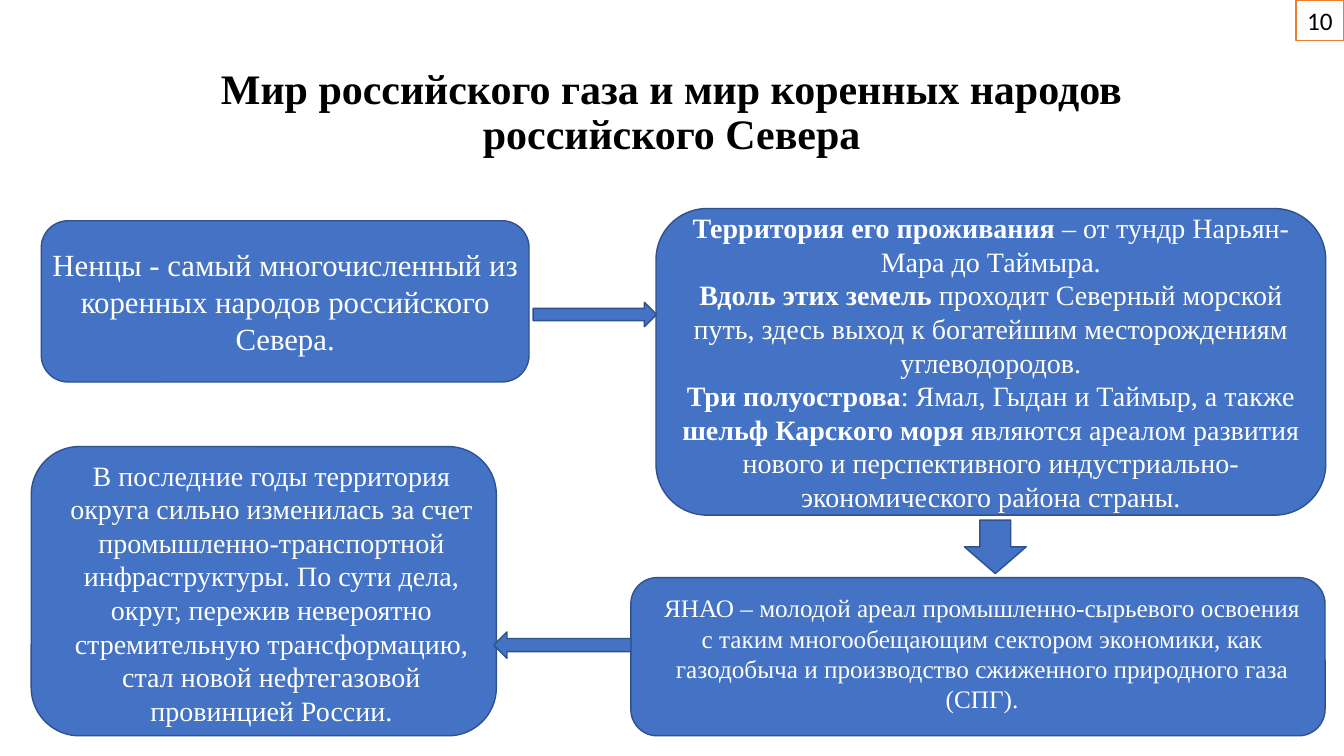
"""Build the slide on Russian gas and the peoples of the North."""
from dataclasses import dataclass

from pptx import Presentation
from pptx.dml.color import RGBColor
from pptx.enum.shapes import MSO_SHAPE
from pptx.enum.text import MSO_ANCHOR, PP_ALIGN
from pptx.shapes.autoshape import Shape
from pptx.slide import Slide
from pptx.text.text import TextFrame
from pptx.util import Pt

SERIF = "Times New Roman"
BLUE, NAVY, ORANGE = "4472C4", "2F528F", "ED7D31"
WHITE, BLACK = "FFFFFF", "000000"

Rect = tuple[float, float, float, float]
Run = tuple[str, bool]


@dataclass
class Box:
    """A filled shape with text; pad is left, top, right, bottom."""
    rect: Rect
    size: float
    text: list[list[Run]]
    pad: Rect
    kind: MSO_SHAPE = MSO_SHAPE.ROUNDED_RECTANGLE
    fill: str = BLUE
    line: str = NAVY
    ink: str = WHITE
    font: str = SERIF


@dataclass
class Arrow:
    """A block arrow."""
    kind: MSO_SHAPE
    rect: Rect


TITLE = "Мир российского газа и мир коренных народов российского Севера"

BOXES = [
    Box((29.5, 157.7, 348.5, 115.2), 22, [[
        ("Ненцы - самый многочисленный из коренных народов российского Севера.", False),
    ]], (1.5, 0, 1.5, 0)),
    Box((468.7, 149, 478.5, 219), 20, [
        [("Территория его проживания ", True),
         ("– от тундр Нарьян-Мара до Таймыра.", False)],
        [("Вдоль этих земель ", True),
         ("проходит Северный морской путь, здесь выход к богатейшим "
          "месторождениям углеводородов.", False)],
        [("Три полуострова", True),
         (": Ямал, Гыдан и Таймыр, а также ", False),
         ("шельф Карского моря ", True),
         ("являются ареалом развития нового и перспективного "
          "индустриально-экономического района страны.", False)],
    ], (0, 0, 0, 0)),
    Box((450.7, 412.6, 496, 113), 18, [[
        ("ЯНАО – молодой ареал промышленно-сырьевого освоения с таким "
         "многообещающим сектором экономики, как газодобыча и производство "
         "сжиженного природного газа (СПГ).", False),
    ]], (14.4, 0, 8.5, 5)),
    Box((22.3, 319, 332.3, 206.6), 20, [[
        ("В последние годы территория округа сильно изменилась за счет "
         "промышленно-транспортной инфраструктуры. По сути дела, округ, "
         "пережив невероятно стремительную трансформацию, стал новой "
         "нефтегазовой провинцией России.", False),
    ]], (13, 2, 2, 0)),
    Box((925.9, 0, 34.3, 28.9), 18, [[("10", False)]], (7.2, 3.6, 7.2, 3.6),
        MSO_SHAPE.RECTANGLE, WHITE, ORANGE, BLACK, "Calibri"),
]

ARROWS = [
    Arrow(MSO_SHAPE.RIGHT_ARROW, (380.9, 216, 88.2, 17.4)),
    Arrow(MSO_SHAPE.DOWN_ARROW, (689, 371.5, 44.2, 38.2)),
    Arrow(MSO_SHAPE.LEFT_ARROW, (352.8, 451.4, 98, 18.8)),
]


def tint(code: str) -> RGBColor:
    """Turn a hex string into a colour."""
    return RGBColor.from_string(code)


def write(frame: TextFrame, text: list[list[Run]], font: str, size: float, ink: str) -> None:
    """Fill a frame with centred paragraphs, run by run."""
    frame.word_wrap = True
    frame.vertical_anchor = MSO_ANCHOR.MIDDLE
    for spot, runs in enumerate(text):
        para = frame.add_paragraph() if spot else frame.paragraphs[0]
        para.alignment = PP_ALIGN.CENTER
        for words, bold in runs:
            run = para.add_run()
            run.text = words
            run.font.name = font
            run.font.size = Pt(size)
            run.font.bold = bold
            run.font.color.rgb = tint(ink)


def draw(slide: Slide, kind: MSO_SHAPE, rect: Rect, fill: str, line: str) -> Shape:
    """Add a flat shape with a thin outline."""
    shape = slide.shapes.add_shape(kind, *map(Pt, rect))
    shape.shadow.inherit = False
    shape.fill.solid()
    shape.fill.fore_color.rgb = tint(fill)
    shape.line.color.rgb = tint(line)
    shape.line.width = Pt(1)
    return shape


def add_box(slide: Slide, box: Box) -> None:
    """Draw a box and its text."""
    frame = draw(slide, box.kind, box.rect, box.fill, box.line).text_frame
    (frame.margin_left, frame.margin_top,
     frame.margin_right, frame.margin_bottom) = map(Pt, box.pad)
    write(frame, box.text, box.font, box.size, box.ink)


def add_title(slide: Slide) -> None:
    """Place and fill the title."""
    title = slide.shapes.title
    title.left, title.top, title.width, title.height = map(Pt, (66, 28.8, 828, 104.4))
    write(title.text_frame, [[(TITLE, True)]], SERIF, 30, BLACK)
    title.text_frame.paragraphs[0].line_spacing = 0.9


def main() -> None:
    """Build and save the deck."""
    deck = Presentation()
    deck.slide_width, deck.slide_height = Pt(960.2), Pt(540)
    slide = deck.slides.add_slide(deck.slide_layouts[5])
    add_title(slide)
    for box in BOXES:
        add_box(slide, box)
    for arrow in ARROWS:
        draw(slide, arrow.kind, arrow.rect, BLUE, NAVY)
    deck.save("out.pptx")


if __name__ == "__main__":
    main()
